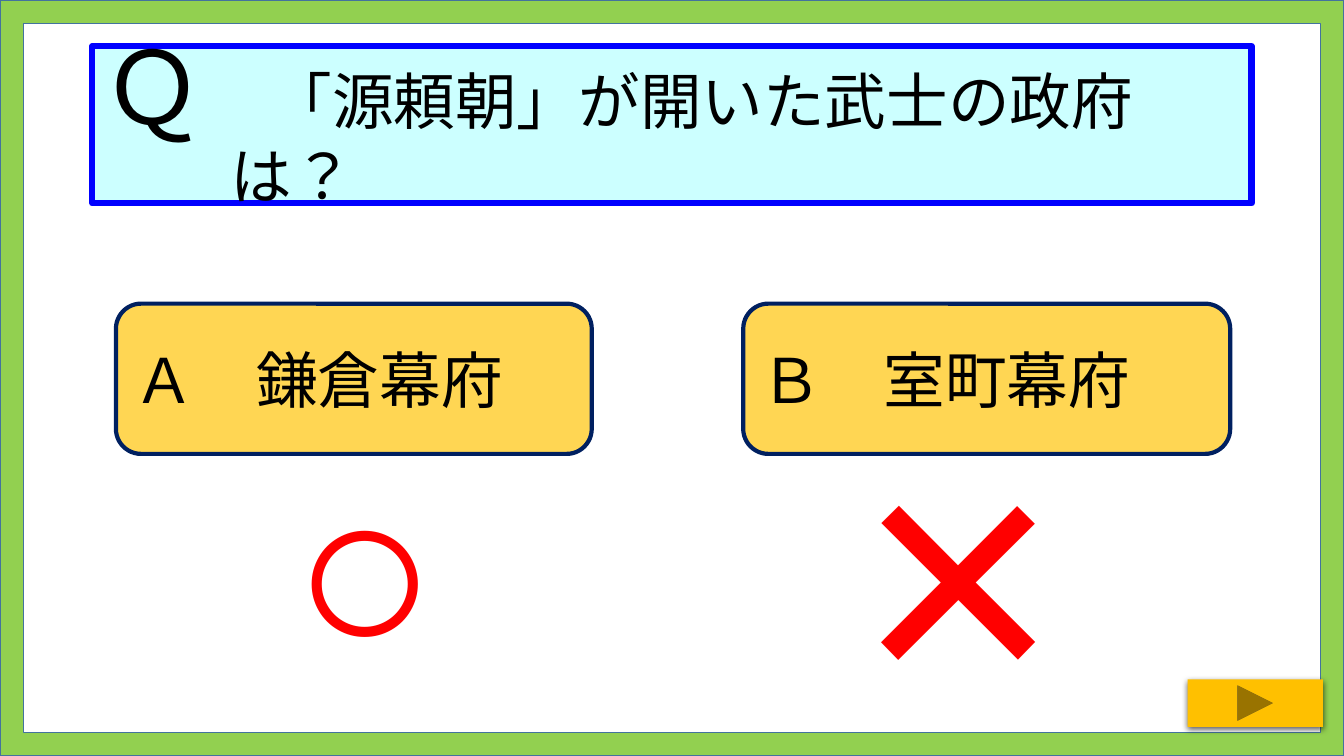
from dataclasses import dataclass

from lxml.etree import SubElement
from pptx import Presentation
from pptx.dml.color import RGBColor
from pptx.enum.lang import MSO_LANGUAGE_ID
from pptx.enum.shapes import MSO_SHAPE
from pptx.enum.text import MSO_ANCHOR, MSO_AUTO_SIZE, PP_ALIGN
from pptx.oxml.ns import qn
from pptx.util import Emu, Inches, Pt

JP_FONT = "Noto Sans CJK JP"
MARK_FONT = "Arial"
ANSWER_TOP, ANSWER_HEIGHT = 40.17, 19.87
MARK_TOP, MARK_WIDTH, MARK_HEIGHT = 55.73, 20.7, 36.8


@dataclass
class Choice:
    """One answer with its mark; lengths are percent of the slide width."""
    text: str
    left: float
    width: float
    mark: str
    mark_left: float
    mark_size: int


CHOICES = [
    Choice("Ａ　鎌倉幕府", 8.63, 35.4, "○", 16.82, 172),
    Choice("Ｂ　室町幕府", 55.3, 36.23, "×", 60.99, 247),
]

prs = Presentation()
prs.slide_width, prs.slide_height = Inches(13.33), Inches(7.5)
slide = prs.slides.add_slide(prs.slide_layouts[5])


def box(left: float, top: float, width: float, height: float) -> list[Emu]:
    """Turn percentages of the slide size into lengths."""
    sides = (prs.slide_width, prs.slide_height) * 2
    return [Emu(int(side * share / 100))
            for side, share in zip(sides, (left, top, width, height))]


def color(value: str) -> RGBColor:
    return RGBColor.from_string(value)


def paint(sp, fill: str, line: str = "", width: float = 0) -> None:
    sp.fill.solid()
    sp.fill.fore_color.rgb = color(fill)
    if line:
        sp.line.color.rgb = color(line)
        sp.line.width = Pt(width)
    else:
        sp.line.fill.background()


def add_shape(kind: MSO_SHAPE, place: list[Emu], fill: str,
              line: str = "", width: float = 0):
    sp = slide.shapes.add_shape(kind, *place)
    sp.shadow.inherit = False
    paint(sp, fill, line, width)
    return sp


def add_run(p, text: str, size: int, font: str = JP_FONT,
            rgb: str = "000000") -> None:
    r = p.add_run()
    r.text = text
    r.font.size, r.font.name = Pt(size), font
    r.font.language_id = MSO_LANGUAGE_ID.JAPANESE
    r.font.color.rgb = color(rgb)
    SubElement(r.font._element, qn("a:ea"), typeface=font)


def hang(p, indent: float) -> None:
    """Left-align a paragraph with a hanging first line, in inches."""
    p.alignment = PP_ALIGN.LEFT
    pPr = p._p.get_or_add_pPr()
    pPr.set("marL", str(Inches(indent)))
    pPr.set("indent", str(-Inches(indent)))


def add_choice(choice: Choice) -> None:
    sp = add_shape(MSO_SHAPE.ROUNDED_RECTANGLE,
                   box(choice.left, ANSWER_TOP, choice.width, ANSWER_HEIGHT),
                   "FFD653", "002060", 3)
    tf = sp.text_frame
    tf.word_wrap, tf.vertical_anchor = True, MSO_ANCHOR.MIDDLE
    hang(tf.paragraphs[0], 0.49)
    add_run(tf.paragraphs[0], choice.text, 44)


def add_mark(choice: Choice) -> None:
    place = box(choice.mark_left, MARK_TOP, MARK_WIDTH, MARK_HEIGHT)
    tf = slide.shapes.add_textbox(*place).text_frame
    tf.word_wrap, tf.vertical_anchor = True, MSO_ANCHOR.MIDDLE
    tf.auto_size = MSO_AUTO_SIZE.SHAPE_TO_FIT_TEXT
    p = tf.paragraphs[0]
    p.alignment = PP_ALIGN.CENTER
    add_run(p, choice.mark, choice.mark_size, MARK_FONT, "FF0000")


def add_next_button() -> None:
    sp = add_shape(MSO_SHAPE.ACTION_BUTTON_FORWARD_OR_NEXT,
                   box(88.37, 89.87, 10.05, 6.27), "FFC000")
    effects = sp._element.spPr.find(qn("a:effectLst"))
    shadow = SubElement(effects, qn("a:outerShdw"), blurRad=str(Pt(4.5)),
                        dist=str(Pt(1.5)), dir="5400000", algn="ctr",
                        rotWithShape="0")
    black = SubElement(shadow, qn("a:srgbClr"), val="000000")
    SubElement(black, qn("a:alpha"), val="63000")


# Green border, behind everything else
frame = add_shape(MSO_SHAPE.FRAME, box(0, 0, 100, 100), "92D050", "43739E", 1)
frame.adjustments[0] = 0.031
slide.shapes._spTree.insert(2, frame._element)

# Question; the right margin sends its last two characters to a second line
title = slide.shapes.title
title.left, title.top, title.width, title.height = box(6.87, 6.1, 86.25, 20.8)
paint(title, "CCFFFF", "0000FF", 4.5)
tf = title.text_frame
tf.word_wrap, tf.vertical_anchor = True, MSO_ANCHOR.MIDDLE
tf.auto_size = MSO_AUTO_SIZE.NONE
tf.margin_right = Inches(0.8)
p = tf.paragraphs[0]
hang(p, 1.27)
p.line_spacing = 0.9
for text, size in [("Ｑ", 72), ("　", 48),
                   ("「源頼朝」が開いた武士の政府は？", 44)]:
    add_run(p, text, size)

# Answers, then their marks
for choice in CHOICES:
    add_choice(choice)
for choice in CHOICES:
    add_mark(choice)

# Button to the next slide
add_next_button()

prs.save("out.pptx")
